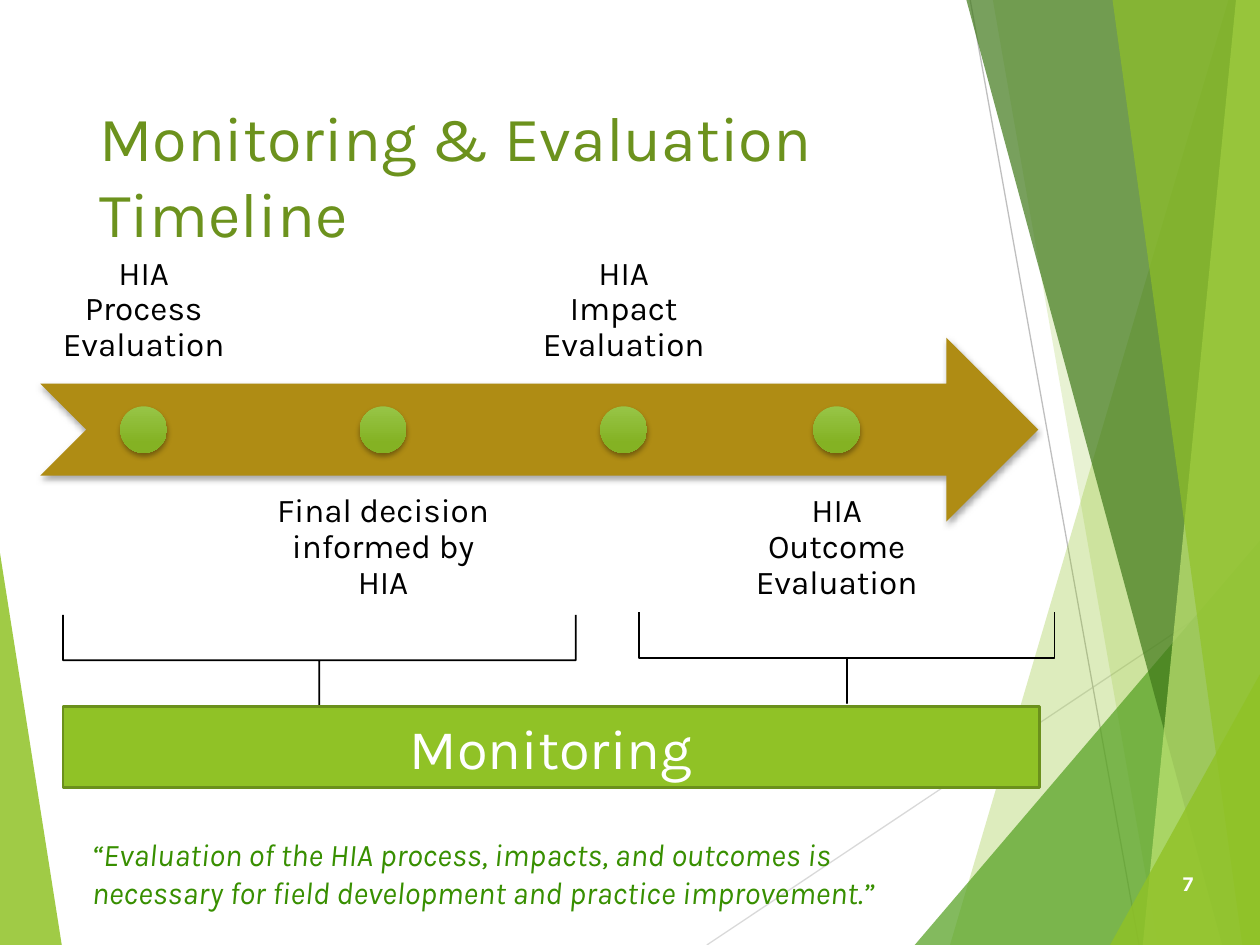
from dataclasses import dataclass

from lxml.etree import SubElement
from pptx import Presentation
from pptx.dml.color import RGBColor
from pptx.enum.shapes import MSO_CONNECTOR as LINK, MSO_SHAPE as SHAPE
from pptx.enum.text import MSO_ANCHOR as ANCHOR, PP_ALIGN as ALIGN
from pptx.oxml.ns import qn
from pptx.util import Inches, Pt


@dataclass(frozen=True)
class Theme:
    """Colours, font and type sizes of the deck."""
    font: str = "Karla"
    lime: str = "90C226"
    green: str = "54A021"
    forest: str = "3F7819"
    pale: str = "C0E474"
    olive: str = "6C921D"
    edge: str = "6B901C"
    gold: str = "AF8C14"
    dot_top: str = "97C547"
    dot_bottom: str = "84B223"
    quote: str = "388F00"
    black: str = "000000"
    white: str = "FFFFFF"
    ray: str = "D9D9D9"
    dark_ray: str = "BFBFBF"
    title_size: int = 36
    bar_size: int = 32
    label_size: int = 19
    quote_size: int = 18
    number_size: int = 12


THEME = Theme()


def rgb(code):
    """Turn a hex code into a colour."""
    return RGBColor.from_string(code)


def inches(*lengths):
    """Convert several lengths to Inches."""
    return [Inches(length) for length in lengths]


def write(shape, text, size, color, align=ALIGN.LEFT, anchor=ANCHOR.TOP,
          margin=None, spacing=None, **style):
    """Put one formatted paragraph into a shape."""
    frame = shape.text_frame
    frame.word_wrap = True
    frame.vertical_anchor = anchor
    if margin is not None:
        for side in ("left", "top", "right", "bottom"):
            setattr(frame, f"margin_{side}", Inches(margin))
    frame.text = text
    paragraph = frame.paragraphs[0]
    paragraph.alignment = align
    paragraph.line_spacing = spacing
    for run in paragraph.runs:
        run.font.color.rgb = rgb(color)
        for key, value in {"name": THEME.font, "size": Pt(size), **style}.items():
            setattr(run.font, key, value)


def add_text(slide, box, *args, **style):
    """Add a text box filling the given box."""
    write(slide.shapes.add_textbox(*inches(*box)), *args, **style)


def add_preset(slide, kind, box, fill=None, line=None, width=1):
    """Add a flat preset shape with optional fill and outline."""
    shape = slide.shapes.add_shape(kind, *inches(*box))
    shape.shadow.inherit = False
    if fill:
        shape.fill.solid()
        shape.fill.fore_color.rgb = rgb(fill)
    else:
        shape.fill.background()
    if line:
        shape.line.color.rgb = rgb(line)
        shape.line.width = Pt(width)
    else:
        shape.line.fill.background()
    return shape


def cast_shadow(shape):
    """Give a shape a soft shadow straight below it."""
    effects = shape.element.spPr.find(qn("a:effectLst"))
    shadow = SubElement(effects, qn("a:outerShdw"), blurRad=str(Pt(3)),
                        dist=str(Pt(2)), dir="5400000", rotWithShape="0")
    color = SubElement(shadow, qn("a:srgbClr"), val=THEME.black)
    SubElement(color, qn("a:alpha"), val="35000")


def add_ray(slide, start, end, color):
    """Draw a thin background line."""
    ray = slide.shapes.add_connector(LINK.STRAIGHT, *inches(*start, *end))
    ray.line.color.rgb = rgb(color)
    ray.line.width = Pt(0.75)
    SubElement(ray.element.spPr, qn("a:effectLst"))


def add_facet(slide, points, color, opacity):
    """Draw a translucent polygon."""
    corners = [tuple(inches(*point)) for point in points]
    builder = slide.shapes.build_freeform(*corners[0])
    builder.add_line_segments(corners[1:], close=True)
    facet = builder.convert_to_shape()
    facet.shadow.inherit = False
    facet.fill.solid()
    facet.fill.fore_color.rgb = rgb(color)
    facet.line.fill.background()
    tint = facet.element.spPr.find(qn("a:solidFill"))[0]
    SubElement(tint, qn("a:alpha"), val=str(opacity * 1000))


def draw_backdrop(slide, box):
    """Draw the faceted edges and rays of the page."""
    left, top, width, height = box
    right, bottom = left + width, top + height
    add_facet(slide, [(left, 4.39), (0.49, bottom), (left, bottom)], THEME.lime, 85)
    add_ray(slide, (5.61, bottom), (right, 4.57), THEME.ray)
    add_ray(slide, (7.7, top), (9.04, bottom), THEME.dark_ray)
    facets = [
        (9.75, 7.54, top, THEME.lime, 30),
        (7.88, 9.19, top, THEME.lime, 20),
        (right, 7.26, 4.29, THEME.green, 72),
        (7.67, 9.7, top, THEME.forest, 70),
        (9.81, 9.07, top, THEME.pale, 70),
        (8.83, 9.86, top, THEME.lime, 65),
        (right, 8.81, 5.35, THEME.lime, 80),
    ]
    for upper, lower, start, color, opacity in facets:
        points = [(upper, start), (lower, bottom), (right, bottom), (right, start)]
        add_facet(slide, points, color, opacity)


def draw_timeline(slide, box):
    """Draw the arrow with its milestones and their labels."""
    left, top, width, height = box
    arrow = add_preset(slide, SHAPE.NOTCHED_RIGHT_ARROW, box, THEME.gold)
    cast_shadow(arrow)
    dot, label_height = 0.37, 1.46
    milestones = [
        ("HIA Process Evaluation", 0.82, 1.61, True),
        ("Final decision informed by HIA", 2.72, 2.04, False),
        ("HIA Impact Evaluation", 4.63, 1.61, True),
        ("HIA Outcome Evaluation", 6.32, 1.61, False),
    ]
    for label, offset, label_width, above in milestones:
        center = left + offset
        label_top = top - 1.1 if above else top + 1.09
        add_text(slide, (center - label_width / 2, label_top, label_width, label_height),
                 label, THEME.label_size, THEME.black, ALIGN.CENTER,
                 ANCHOR.BOTTOM if above else ANCHOR.TOP, margin=0.15, spacing=0.9)
        marker = add_preset(slide, SHAPE.OVAL, (center - dot / 2, top + (height - dot) / 2,
                                                dot, dot))
        marker.fill.gradient()
        marker.fill.gradient_angle = 270
        shades = [(0, THEME.dot_top), (0.78, THEME.dot_bottom)]
        for stop, (position, color) in zip(marker.fill.gradient_stops, shades):
            stop.position = position
            stop.color.rgb = rgb(color)
        cast_shadow(marker)


def draw_bracket(slide, box):
    """Draw a square bracket that opens upwards and fills the box."""
    left, top, width, height = box
    upright = (left + (width - height) / 2, top + (height - width) / 2, height, width)
    bracket = add_preset(slide, SHAPE.LEFT_BRACE, upright, line=THEME.black)
    bracket.rotation = 270
    bracket.adjustments[0] = 0
    bracket.adjustments[1] = 0.5


def draw_monitoring(slide, box):
    """Draw the monitoring bar and the two brackets that lead to it."""
    left, top, width, height = box
    draw_bracket(slide, (left, top - 0.73, 4.07, 0.72))
    draw_bracket(slide, (left + 4.57, top - 0.75, 3.3, 0.72))
    bar = add_preset(slide, SHAPE.RECTANGLE, box, THEME.lime, THEME.edge, 1.5)
    write(bar, "Monitoring", THEME.bar_size, THEME.white, ALIGN.CENTER, ANCHOR.MIDDLE)


def main():
    """Build and save the slide."""
    deck = Presentation()
    deck.slide_width, deck.slide_height = inches(10, 7.5)
    slide = deck.slides.add_slide(deck.slide_layouts[6])
    draw_backdrop(slide, (0, 0, 10, 7.5))
    add_text(slide, (0.69, 0.69, 9, 1.39), "Monitoring & Evaluation \vTimeline",
             THEME.title_size, THEME.olive, anchor=ANCHOR.MIDDLE)
    draw_timeline(slide, (0.32, 2.68, 7.92, 1.46))
    draw_monitoring(slide, (0.5, 5.61, 7.75, 0.64))
    add_text(slide, (0.63, 6.58, 7.15, 0.71),
             "“Evaluation of the HIA process, impacts, and outcomes is necessary "
             "for field development and practice improvement.”",
             THEME.quote_size, THEME.quote, italic=True)
    add_text(slide, (9.01, 6.86, 0.56, 0.4), "7", THEME.number_size, THEME.white,
             ALIGN.RIGHT, bold=True)
    deck.save("out.pptx")


if __name__ == "__main__":
    main()
